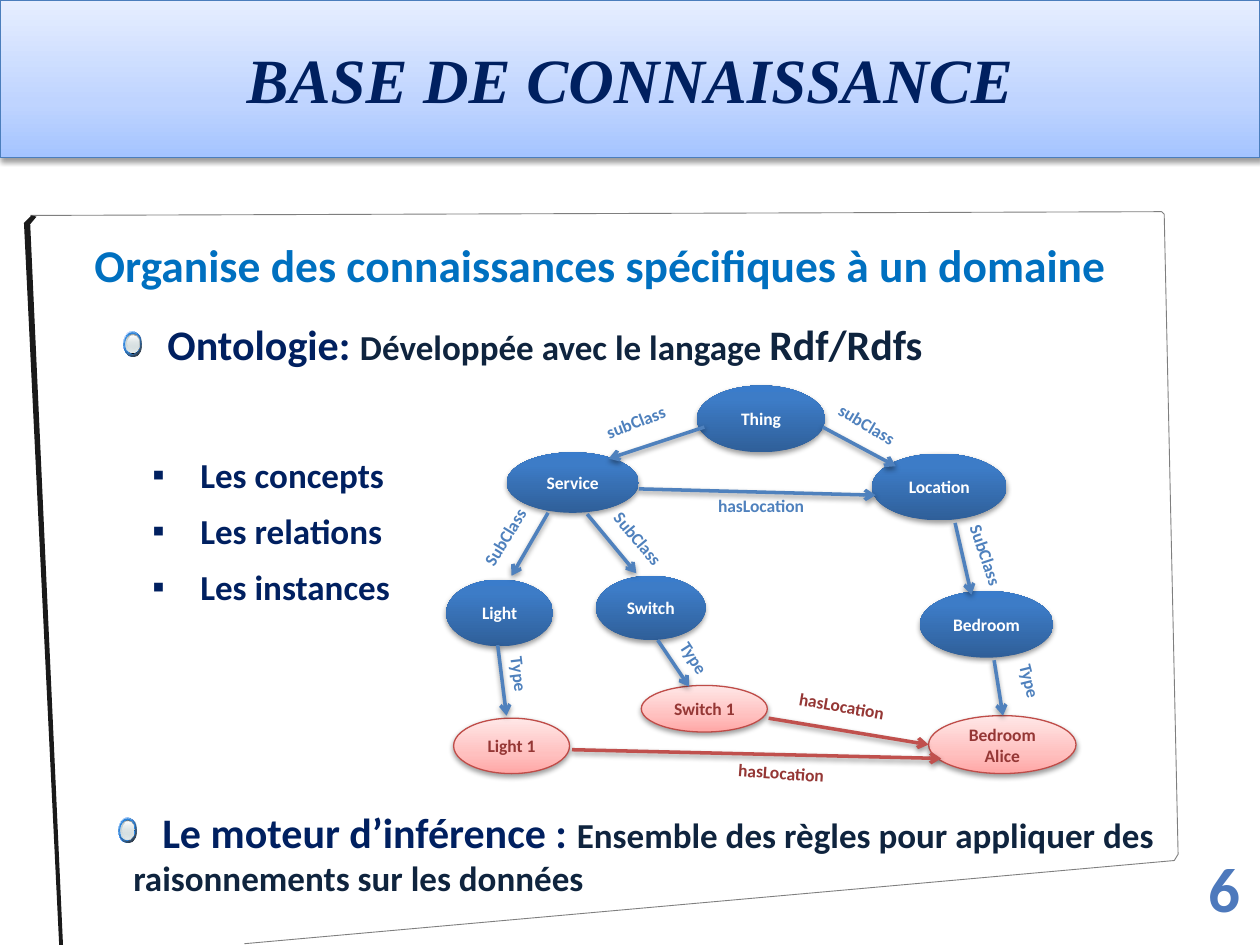
from dataclasses import dataclass

from lxml.etree import SubElement
from pptx import Presentation
from pptx.dml.color import RGBColor
from pptx.enum.shapes import MSO_CONNECTOR as Connector, MSO_SHAPE as Preset
from pptx.enum.text import MSO_ANCHOR as Anchor, MSO_AUTO_SIZE as AutoSize, PP_ALIGN as Align
from pptx.oxml.ns import qn
from pptx.util import Inches, Pt

NAVY, INK, BLUE, RED, DARK_RED = "002060", "0F243E", "4F81BD", "C0504D", "953735"
Stop = tuple[int, str, int]  # position %, colour, opacity %
Point = tuple[float, float]
Box = tuple[float, float, float, float]

BANNER = [(0, "A4C4FF", 100), (35, "BFD4FF", 100), (100, "E6EEFF", 100)]
CONCEPT = [(0, "2F5F99", 100), (80, "3D7CC7", 100), (100, "3A7CCB", 100)]
INSTANCE = [(0, "FFA6A5", 100), (35, "FFC0BF", 100), (100, "FFE7E7", 100)]


@dataclass
class Node:
    label: str
    box: Box
    is_instance: bool = False


@dataclass
class Relation:
    label: str
    start: Point
    end: Point
    label_at: Point
    label_width: float
    rotation: float
    between_instances: bool = False


@dataclass
class BallLayer:
    box: Box
    angle: int
    stops: list[Stop]


NODES = [
    Node("Thing", (5.53, 3.06, 1.02, 0.53)),
    Node("Service", (4.02, 3.59, 1.05, 0.48)),
    Node("Location", (6.92, 3.6, 1.07, 0.53)),
    Node("Light", (3.54, 4.6, 0.85, 0.53)),
    Node("Switch", (4.73, 4.57, 0.87, 0.51)),
    Node("Bedroom", (7.3, 4.69, 1.06, 0.53)),
    Node("Light 1", (3.6, 5.7, 0.92, 0.44), True),
    Node("Switch 1", (5.09, 5.44, 1, 0.37), True),
    Node("Bedroom Alice", (7.37, 5.68, 1.17, 0.46), True),
]
RELATIONS = [
    Relation("subClass", (5.59, 3.39), (4.83, 3.64), (4.7, 3.2), 0.76, 339),
    Relation("subClass", (6.53, 3.39), (7.11, 3.7), (6.53, 3.26), 0.79, 30.7),
    Relation("hasLocation", (5.07, 3.88), (6.95, 3.93), (5.6, 3.88), 1.11, 0),
    Relation("SubClass", (4.35, 4.07), (4.06, 4.57), (3.65, 4.11), 0.74, 301.6),
    Relation("SubClass", (4.66, 4.08), (5.05, 4.55), (4.71, 4.15), 0.72, 50),
    Relation("SubClass", (7.58, 4.15), (7.71, 4.72), (7.44, 4.32), 0.8, 71.4),
    Relation("Type", (3.95, 5.12), (4.02, 5.68), (3.81, 5.3), 0.64, 83.2),
    Relation("Type", (5.22, 5.08), (5.47, 5.45), (5.25, 5.13), 0.57, 57.2),
    Relation("Type", (7.89, 5.24), (7.96, 5.68), (7.9, 5.32), 0.57, 76),
    Relation("hasLocation", (4.54, 5.95), (7.47, 6.02), (5.76, 6.01), 1.17, 4, True),
    Relation("hasLocation", (6.1, 5.7), (7.37, 5.91), (6.24, 5.48), 1.01, 9.9, True),
]
BALL_LAYERS = [
    BallLayer((0, 0, 0.14, 0.2), 45, [(0, "FFFFFF", 100), (50, "3399FF", 100), (100, "FFFFFF", 100)]),
    BallLayer((0, 0, 0.14, 0.2), 45, [(0, "3399FF", 32), (100, "000000", 90)]),
    BallLayer((0.01, 0.01, 0.12, 0.17), 315, [(0, "2775C3", 100), (50, "3399FF", 100), (100, "2775C3", 100)]),
    BallLayer((0.01, 0.01, 0.12, 0.17), 45, [(0, "2A7ED1", 100), (100, "3399FF", 0)]),
    BallLayer((0.02, 0.02, 0.11, 0.16), 90, [(0, "000000", 100), (100, "000000", 100)]),
    BallLayer((0.02, 0.02, 0.11, 0.15), 90, [(0, "99A1A2", 100), (100, "D6E1E2", 100)]),
    BallLayer((0.02, 0.02, 0.1, 0.15), 90, [(0, "D6E1E2", 0), (100, "F2F5F5", 100)]),
    BallLayer((0.02, 0.03, 0.1, 0.14), 90, [(0, "C1CBCC", 100), (100, "D6E1E2", 48)]),
    BallLayer((0.03, 0.03, 0.09, 0.11), 90, [(0, "FFFFFF", 100), (100, "D6E1E2", 38)]),
]


def rgb(color: str) -> RGBColor:
    return RGBColor.from_string(color)


def inches(values) -> list[int]:
    return [Inches(value) for value in values]


def write(paragraph, text: str, *, size=10, color=NAVY, font="Calibri", bold=True, italic=False):
    run = paragraph.add_run()
    run.text = text
    run.font.name, run.font.size = font, Pt(size)
    run.font.bold, run.font.italic = bold, italic
    run.font.color.rgb = rgb(color)


def fill_gradient(shape, stops: list[Stop], angle: int):
    """Fill with any number of stops; the angle runs clockwise."""
    shape.fill.gradient()
    gradient = shape._element.spPr.find(qn("a:gradFill"))
    stop_list = gradient.find(qn("a:gsLst"))
    stop_list.clear()
    for position, color, opacity in stops:
        stop = SubElement(stop_list, qn("a:gs"), pos=str(position * 1000))
        tint = SubElement(stop, qn("a:srgbClr"), val=color)
        SubElement(tint, qn("a:alpha"), val=str(opacity * 1000))
    gradient.find(qn("a:lin")).set("ang", str(angle * 60000))


def set_line(shape, color: str, width: float):
    shape.line.color.rgb = rgb(color)
    shape.line.width = Pt(width)


def cast_shadow(shape):
    """Soft shadow below; call it after fill and line."""
    effects = SubElement(shape._element.spPr, qn("a:effectLst"))
    shadow = SubElement(effects, qn("a:outerShdw"), blurRad=str(Pt(3.1)), dist=str(Pt(1.6)),
                        dir="5400000", algn="ctr", rotWithShape="0")
    tint = SubElement(shadow, qn("a:srgbClr"), val="000000")
    SubElement(tint, qn("a:alpha"), val="38000")


def add_text(slide, box: Box, wrap=True):
    """Add a text box and return it with its first paragraph."""
    holder = slide.shapes.add_textbox(*inches(box))
    holder.text_frame.word_wrap = wrap
    return holder, holder.text_frame.paragraphs[0]


def place(placeholder, box: Box):
    placeholder.left, placeholder.top, placeholder.width, placeholder.height = inches(box)
    placeholder.text_frame.auto_size = AutoSize.NONE


def draw_outline(slide, points: list[Point], closed: bool):
    builder = slide.shapes.build_freeform(*inches(points[0]))
    builder.add_line_segments([inches(point) for point in points[1:]], close=closed)
    outline = builder.convert_to_shape()
    outline.shadow.inherit = False
    return outline


def draw_panel(slide):
    edge = draw_outline(slide, [(0.24, 1.71), (9.22, 1.68), (9.24, 1.7), (9.35, 6.78),
                                (9.32, 6.83), (1.94, 7.49)], closed=False)
    edge.fill.background()
    set_line(edge, "7F7F7F", 0.5)
    side = draw_outline(slide, [(0.19, 1.77), (0.25, 1.71), (0.29, 1.72), (0.24, 1.78),
                                (0.5, 7.5), (0.47, 7.5)], closed=True)
    side.fill.solid()
    side.fill.fore_color.rgb = rgb("1A1A1A")
    side.line.fill.background()


def draw_ball(slide, left: float, top: float):
    ball = slide.shapes.add_group_shape()
    for layer in BALL_LAYERS:
        x, y, width, height = layer.box
        disc = ball.shapes.add_shape(Preset.OVAL, *inches((left + x, top + y, width, height)))
        fill_gradient(disc, layer.stops, layer.angle)
        disc.line.fill.background()
        disc.shadow.inherit = False


def draw_node(slide, node: Node):
    oval = slide.shapes.add_shape(Preset.OVAL, *inches(node.box))
    fill_gradient(oval, INSTANCE if node.is_instance else CONCEPT, 270)
    if node.is_instance:
        set_line(oval, "BF4C48", 0.75)
    else:
        oval.line.fill.background()
    cast_shadow(oval)
    frame = oval.text_frame
    frame.vertical_anchor = Anchor.MIDDLE
    frame.margin_left = frame.margin_right = Inches(0.05)
    frame.paragraphs[0].alignment = Align.CENTER
    write(frame.paragraphs[0], node.label, color=DARK_RED if node.is_instance else "FFFFFF")


def draw_relation(slide, relation: Relation):
    arrow = slide.shapes.add_connector(Connector.STRAIGHT, *inches(relation.start + relation.end))
    set_line(arrow, RED if relation.between_instances else BLUE, 2)
    SubElement(arrow.line._get_or_add_ln(), qn("a:tailEnd"), type="arrow")
    cast_shadow(arrow)
    caption, paragraph = add_text(slide, (*relation.label_at, relation.label_width, 0.27))
    caption.rotation = relation.rotation
    write(paragraph, relation.label, color=DARK_RED if relation.between_instances else BLUE)


def fill_list(body, items: list[str]):
    frame = body.text_frame
    for index, item in enumerate(items):
        paragraph = frame.add_paragraph() if index else frame.paragraphs[0]
        paragraph.space_before, paragraph.space_after = Pt(0), Pt(8)
        properties = paragraph._p.get_or_add_pPr()
        properties.set("marL", str(Inches(0.38)))
        properties.set("indent", str(Inches(-0.38)))
        SubElement(properties, qn("a:buChar"), char="▪")
        write(paragraph, item, size=20)


def main():
    deck = Presentation()
    deck.slide_width, deck.slide_height = Inches(10), Inches(7.5)
    slide = deck.slides.add_slide(deck.slide_layouts[1])
    title, body = slide.placeholders

    place(title, (0, 0, 10, 1.25))
    fill_gradient(title, BANNER, 270)
    set_line(title, "4B7EBC", 0.75)
    cast_shadow(title)
    title.text_frame.vertical_anchor = Anchor.MIDDLE
    write(title.text_frame.paragraphs[0], "BASE DE CONNAISSANCE", size=36,
          font="Times New Roman", italic=True)
    place(body, (1.11, 3.55, 2.16, 1.35))
    fill_list(body, ["Les concepts", "Les relations", "Les instances"])

    draw_panel(slide)
    _, summary = add_text(slide, (0.65, 1.83, 9.3, 0.54))
    write(summary, "Organise des connaissances spécifiques à un domaine", size=26, color="0070C0")
    _, ontology = add_text(slide, (1.23, 2.48, 7.98, 0.5))
    write(ontology, "Ontologie: ", size=24)
    write(ontology, "Développée avec le langage ", size=20, color=INK)
    write(ontology, "Rdf/Rdfs", size=24, color=INK)
    _, engine = add_text(slide, (0.96, 6.35, 8.8, 0.84))
    engine._p.get_or_add_pPr().set("indent", str(Inches(0.23)))
    write(engine, "Le moteur d’inférence : ", size=24)
    write(engine, "Ensemble des règles pour appliquer des raisonnements sur les données",
          size=20, color=INK)
    _, page_number = add_text(slide, (9.49, 6.69, 0.46, 0.71), wrap=False)
    page_number.alignment = Align.CENTER
    write(page_number, "6", size=36, color="4D79BC")

    for left, top in [(0.98, 2.63), (0.94, 6.49)]:
        draw_ball(slide, left, top)
    for node in NODES:
        draw_node(slide, node)
    for relation in RELATIONS:
        draw_relation(slide, relation)
    deck.save("out.pptx")


if __name__ == "__main__":
    main()
